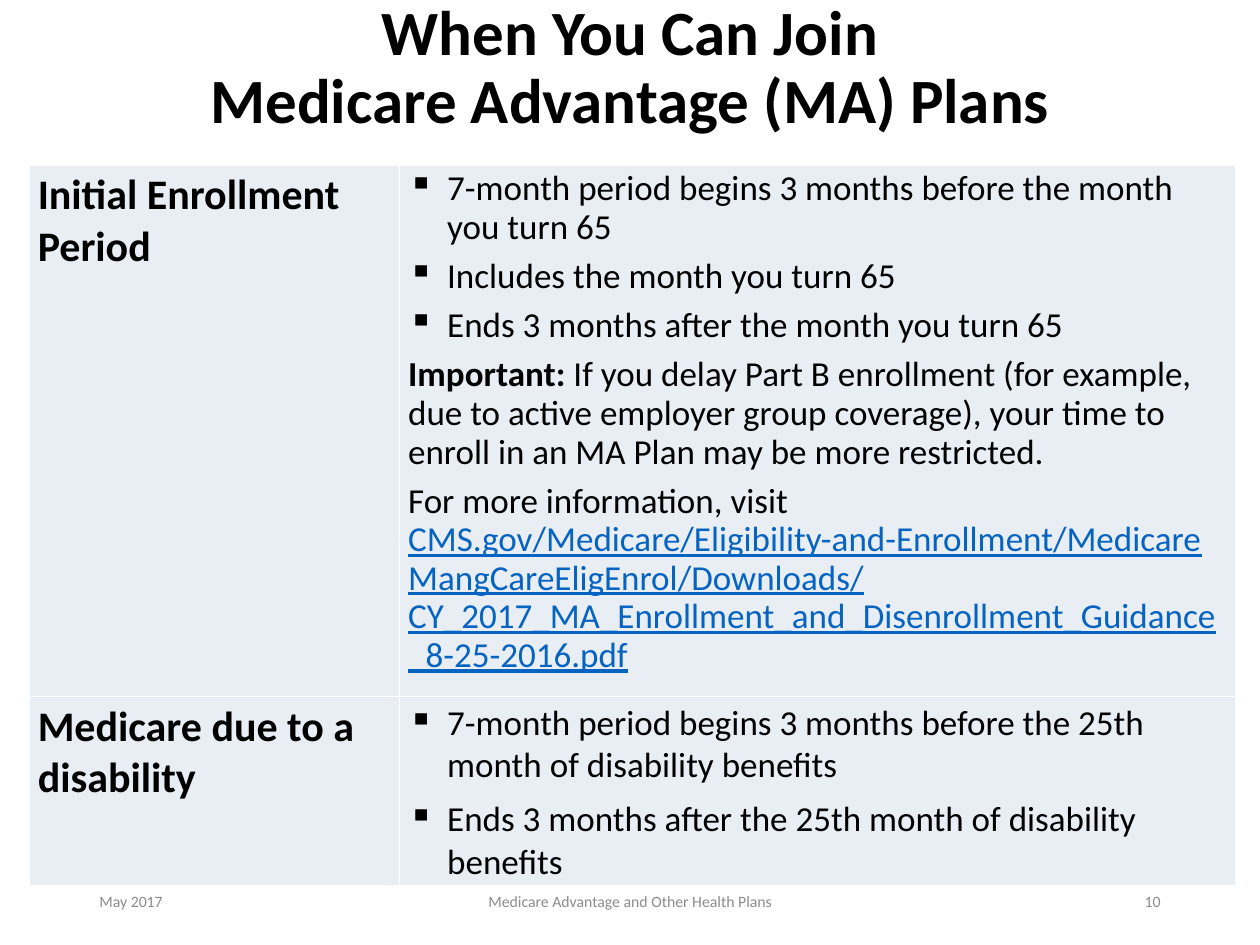
from lxml import etree
from pptx import Presentation
from pptx.dml.color import RGBColor
from pptx.enum.text import MSO_ANCHOR, PP_ALIGN
from pptx.oxml.ns import qn
from pptx.util import Inches, Pt

BLACK = RGBColor(0x00, 0x00, 0x00)
GREY = RGBColor(0x8C, 0x8C, 0x8C)
LINK_BLUE = RGBColor(0x05, 0x63, 0xC1)
CELL_FILL = RGBColor(0xE9, 0xED, 0xF4)
FONT = "Calibri"

LINK = {"underline": True, "color": LINK_BLUE}
BOLD = {"bold": True}

TITLE = "When You Can Join\vMedicare Advantage (MA) Plans"
# Each row: heading, line spacing, bullets, then plain paragraphs as (text, format) runs
PERIODS = [
    ("Initial Enrollment Period", 0.9,
     ["7-month period begins 3 months before the month you turn 65",
      "Includes the month you turn 65",
      "Ends 3 months after the month you turn 65"],
     [[("Important:", BOLD),
       (" If you delay Part B enrollment (for example, due to active employer "
        "group coverage), your time to enroll in an MA Plan may be more "
        "restricted.", {})],
      [("For more information, visit \v", {}),
       ("CMS.gov/Medicare/Eligibility-and-Enrollment/MedicareMangCareEligEnrol/"
        "Downloads/CY_2017_MA_Enrollment_and_Disenrollment_Guidance_8-25-2016.pdf",
        LINK)]]),
    ("Medicare due to a disability", 1.0,
     ["7-month period begins 3 months before the 25th month of disability benefits",
      "Ends 3 months after the 25th month of disability benefits"],
     []),
]
FOOTER = [
    ("May 2017", 0.69, 2.25, PP_ALIGN.LEFT),
    ("Medicare Advantage and Other Health Plans", 3.31, 3.38, PP_ALIGN.CENTER),
    ("10", 7.06, 2.25, PP_ALIGN.RIGHT),
]


def add_runs(paragraph, runs, size):
    """Fill a paragraph with (text, format) runs; a vertical tab breaks the line."""
    for text, changes in runs:
        for index, line in enumerate(text.split("\v")):
            if index:
                paragraph.add_line_break()
            if not line:
                continue
            run = paragraph.add_run()
            run.text = line
            style = {"name": FONT, "size": Pt(size), "bold": False,
                     "color": BLACK, **changes}
            run.font.color.rgb = style.pop("color")
            for attribute, value in style.items():
                setattr(run.font, attribute, value)


def add_bullet(paragraph):
    properties = paragraph._p.get_or_add_pPr()
    properties.set("marL", str(Inches(0.31)))
    properties.set("indent", str(-Inches(0.31)))
    etree.SubElement(properties, qn("a:buChar")).set("char", "▪")


def add_label(slide, box, text, size, alignment, changes, line_spacing=1.0):
    frame = slide.shapes.add_textbox(*map(Inches, box)).text_frame
    frame.word_wrap = True
    frame.vertical_anchor = MSO_ANCHOR.MIDDLE
    paragraph = frame.paragraphs[0]
    paragraph.alignment = alignment
    paragraph.line_spacing = line_spacing
    add_runs(paragraph, [(text, changes)], size)


def fill_details(frame, line_spacing, bullets, notes):
    contents = [([(text, {})], True) for text in bullets]
    contents += [(runs, False) for runs in notes]
    for index, (runs, bulleted) in enumerate(contents):
        paragraph = frame.add_paragraph() if index else frame.paragraphs[0]
        paragraph.line_spacing = line_spacing
        paragraph.space_before = Pt(6 if index else 0)
        if bulleted:
            add_bullet(paragraph)
        add_runs(paragraph, runs, 20)


def add_periods_table(slide, box, column_widths, row_heights):
    table = slide.shapes.add_table(len(PERIODS), 2, *map(Inches, box)).table
    table.first_row = False
    table.horz_banding = False
    for column, width in zip(table.columns, column_widths):
        column.width = Inches(width)
    for row, height in zip(table.rows, row_heights):
        row.height = Inches(height)
    for cell in table.iter_cells():
        cell.fill.solid()
        cell.fill.fore_color.rgb = CELL_FILL
        cell.margin_left = cell.margin_right = Inches(0.07)
        cell.margin_top = cell.margin_bottom = Inches(0.04)
    for row, (heading, *details) in enumerate(PERIODS):
        heading_frame = table.cell(row, 0).text_frame
        add_runs(heading_frame.paragraphs[0], [(heading, BOLD)], 24)
        fill_details(table.cell(row, 1).text_frame, *details)


def add_footer(slide, top, height):
    for text, left, width, alignment in FOOTER:
        add_label(slide, (left, top, width, height), text, 9, alignment,
                  {"color": GREY})


def main():
    presentation = Presentation()
    presentation.slide_width = Inches(10)
    presentation.slide_height = Inches(7.5)
    slide = presentation.slides.add_slide(presentation.slide_layouts[6])
    add_label(slide, (0, -0.01, 10, 1.11), TITLE, 36, PP_ALIGN.CENTER, BOLD, 0.9)
    add_periods_table(slide, (0.23, 1.31, 9.58, 5.71), (2.94, 6.64), (4.22, 1.49))
    add_footer(slide, 6.95, 0.4)
    presentation.save("out.pptx")


if __name__ == "__main__":
    main()
